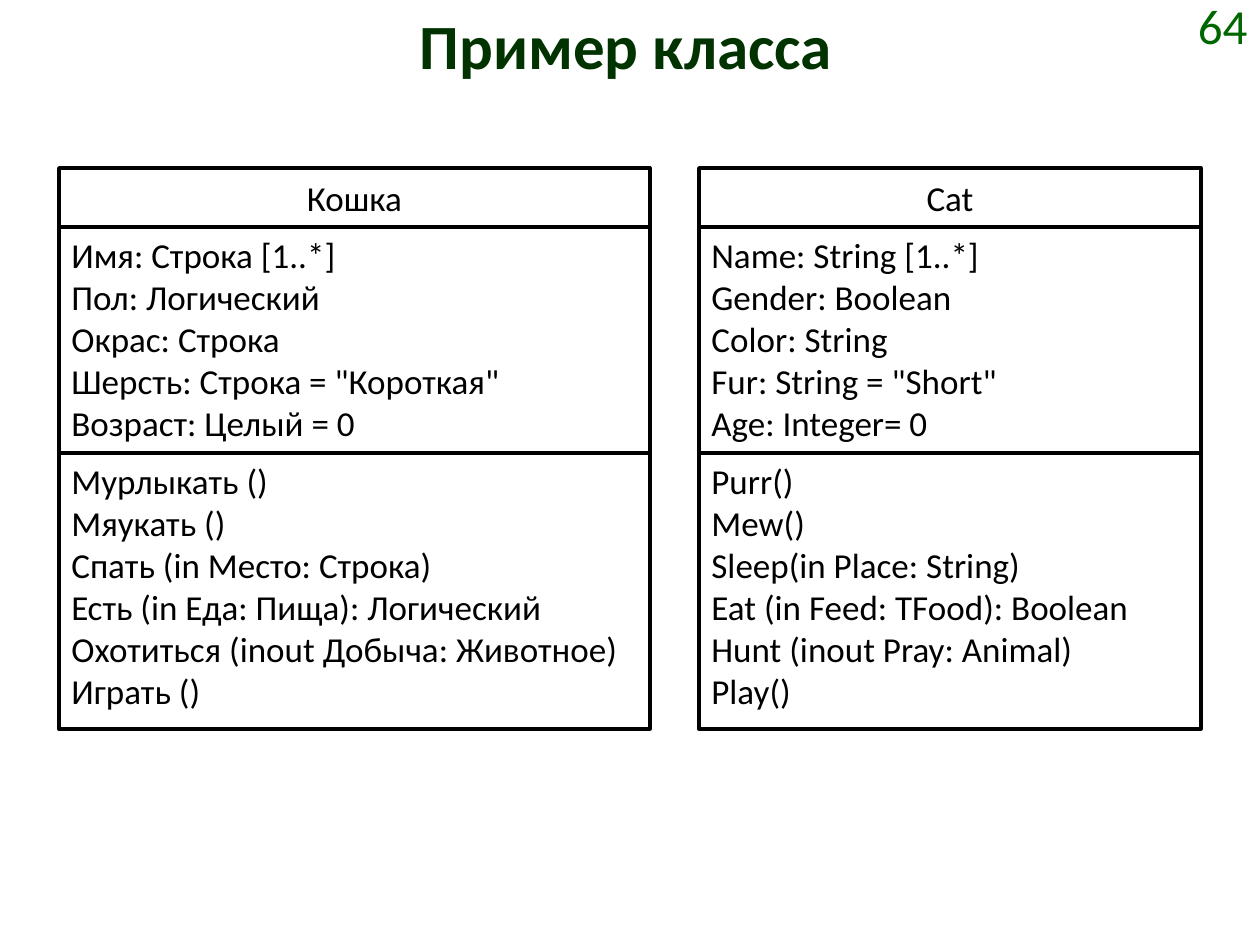
from dataclasses import dataclass

import pptx
import pptx.dml.color
import pptx.enum.shapes
import pptx.enum.text
import pptx.util

PX = 914400 // 126
FONT = "Calibri"
BLACK, WHITE = "000000", "FFFFFF"
TOP = 168
HEIGHTS = (59, 226, 276)
ALIGN = pptx.enum.text.PP_ALIGN
ANCHOR = pptx.enum.text.MSO_ANCHOR


@dataclass
class Box:
    left: int
    top: int
    width: int
    height: int

    def emu(self) -> list[int]:
        return [n * PX for n in (self.left, self.top, self.width, self.height)]


@dataclass
class Card:
    """A class diagram: name, fields and methods."""
    left: int
    width: int
    name: str
    fields: list[str]
    acts: list[str]


CARDS = [
    Card(59, 591, "Кошка",
         ["Имя: Строка [1..*]", "Пол: Логический", "Окрас: Строка",
          'Шерсть: Строка = "Короткая"', "Возраст: Целый = 0"],
         ["Мурлыкать ()", "Мяукать ()", "Спать (in Место: Строка)",
          "Есть (in Еда: Пища): Логический",
          "Охотиться (inout Добыча: Животное)", "Играть ()"]),
    Card(699, 502, "Cat",
         ["Name: String [1..*]", "Gender: Boolean", "Color: String",
          'Fur: String = "Short"', "Age: Integer= 0"],
         ["Purr()", "Mew()", "Sleep(in Place: String)",
          "Eat (in Feed: TFood): Boolean", "Hunt (inout Pray: Animal)",
          "Play()"]),
]


def rgb(code: str) -> pptx.dml.color.RGBColor:
    return pptx.dml.color.RGBColor.from_string(code)


def apply(item, form: dict) -> None:
    for key, value in form.items():
        setattr(item, key, value)


def write(shape, lines: list[str], size: int, color: str, anchor=ANCHOR.TOP,
          bold: bool = False, **form) -> None:
    """Fill a shape with one paragraph per line; form formats paragraphs."""
    frame = shape.text_frame
    apply(frame, {"word_wrap": True, "vertical_anchor": anchor})
    frame.text = "\n".join(lines)
    for para in frame.paragraphs:
        apply(para, form)
        for run in para.runs:
            apply(run.font, {"name": FONT, "size": pptx.util.Pt(size), "bold": bold})
            run.font.color.rgb = rgb(color)


def frame_box(slide, box: Box):
    kind = pptx.enum.shapes.MSO_SHAPE.RECTANGLE
    shape = slide.shapes.add_shape(kind, *box.emu())
    shape.shadow.inherit = False
    shape.fill.solid()
    shape.fill.fore_color.rgb = rgb(WHITE)
    shape.line.color.rgb = rgb(BLACK)
    shape.line.width = pptx.util.Pt(2)
    return shape


def draw_card(slide, card: Card) -> None:
    head = {"anchor": ANCHOR.MIDDLE, "alignment": ALIGN.CENTER,
            "space_before": pptx.util.Pt(12)}
    body = {"alignment": ALIGN.LEFT}
    parts = [([card.name], head), (card.fields, body), (card.acts, body)]
    top = TOP
    for height, (lines, form) in zip(HEIGHTS, parts):
        shape = frame_box(slide, Box(card.left, top, card.width, height))
        write(shape, lines, 20, BLACK, **form)
        top += height


def main() -> None:
    deck = pptx.Presentation()
    apply(deck, {"slide_width": 1260 * PX, "slide_height": 945 * PX})
    slide = deck.slides.add_slide(deck.slide_layouts[6])
    title = slide.shapes.add_textbox(*Box(59, 0, 1134, 118).emu())
    write(title, ["Пример класса"], 36, "003300", bold=True, alignment=ALIGN.CENTER)
    number = slide.shapes.add_textbox(*Box(1131, 0, 129, 49).emu())
    write(number, ["64"], 28, "006600", ANCHOR.MIDDLE, alignment=ALIGN.RIGHT)
    for card in CARDS:
        draw_card(slide, card)
    deck.save("out.pptx")


if __name__ == "__main__":
    main()
